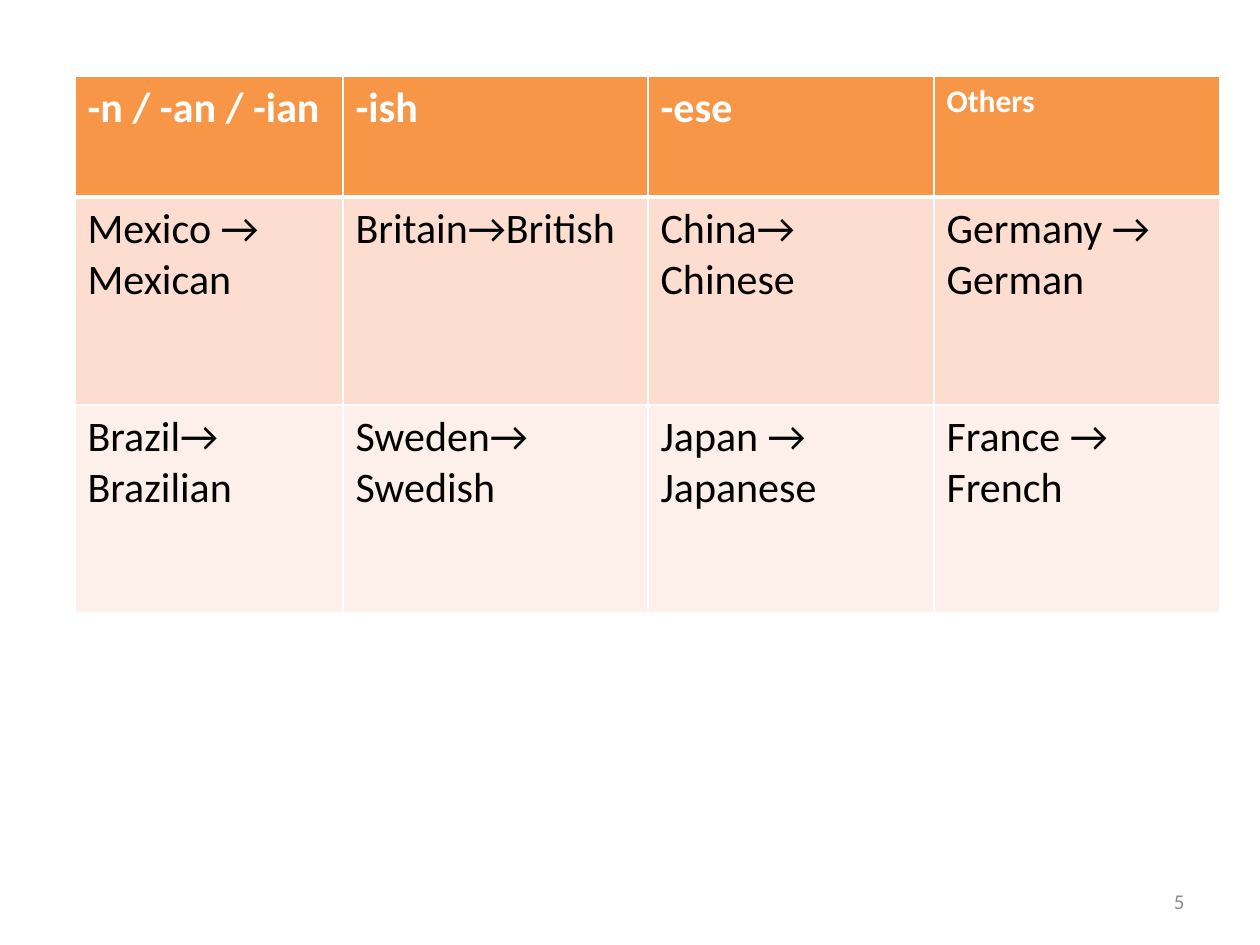
from pptx import Presentation
from pptx.dml.color import RGBColor
from pptx.enum.text import MSO_ANCHOR, PP_ALIGN
from pptx.oxml import parse_xml
from pptx.oxml.ns import nsdecls
from pptx.util import Pt

RIGHT, MIDDLE = PP_ALIGN.RIGHT, MSO_ANCHOR.MIDDLE
WHITE = RGBColor(0xFF, 0xFF, 0xFF)
BLACK = RGBColor(0x00, 0x00, 0x00)
GRAY = RGBColor(0x8C, 0x8C, 0x8C)
ORANGE = RGBColor(0xF7, 0x96, 0x46)
PEACH = RGBColor(0xFC, 0xDD, 0xCF)
PALE = RGBColor(0xFD, 0xEF, 0xE9)
FONT = "Calibri"

# Content
ROWS = [
    ("-n / -an / -ian", "-ish", "-ese", "Others"),
    ("Mexico → Mexican", "Britain→British", "China→ Chinese", "Germany → German"),
    ("Brazil→ Brazilian", "Sweden→ Swedish", "Japan → Japanese", "France → French"),
]
ROW_FILLS = [ORANGE, PEACH, PALE]
COL_WIDTHS = [268, 305, 286, 286]
ROW_HEIGHTS = [121, 208, 208]
SMALL_HEADING = "Others"
PAGE_NUMBER = "5"


def px(n):
    return round(n * 914400 / 126)


def style(p, size, color, bold=False):
    p.font.name = FONT
    p.font.size = Pt(size)
    p.font.bold = bold
    p.font.color.rgb = color


def add_borders(cell, bottom, top):
    """Put white lines of the given widths round a cell, before its fill."""
    widths = {"lnL": 1, "lnR": 1, "lnT": top, "lnB": bottom}
    tcPr = cell._tc.get_or_add_tcPr()
    for i, (tag, width) in enumerate(widths.items()):
        tcPr.insert(i, parse_xml(
            f'<a:{tag} {nsdecls("a")} w="{Pt(width)}"><a:solidFill>'
            f'<a:srgbClr val="{WHITE}"/></a:solidFill></a:{tag}>'))


prs = Presentation()
prs.slide_width, prs.slide_height = px(1260), px(945)
s = prs.slides.add_slide(prs.slide_layouts[6])

# Table of nationality endings
table = s.shapes.add_table(len(ROWS), len(COL_WIDTHS), px(75), px(76),
                           px(sum(COL_WIDTHS)), px(sum(ROW_HEIGHTS))).table
for column, width in zip(table.columns, COL_WIDTHS):
    column.width = px(width)
for r, (texts, height, fill) in enumerate(zip(ROWS, ROW_HEIGHTS, ROW_FILLS)):
    table.rows[r].height = px(height)
    header = r == 0
    for c, text in enumerate(texts):
        cell = table.cell(r, c)
        cell.text = text
        cell.fill.solid()
        cell.fill.fore_color.rgb = fill
        add_borders(cell, bottom=3 if header else 1, top=3 if r == 1 else 1)
        style(cell.text_frame.paragraphs[0], 18 if text == SMALL_HEADING else 24,
              WHITE if header else BLACK, header)

# Page number
tf = s.shapes.add_textbox(px(903), px(876), px(294), px(50)).text_frame
tf.word_wrap = True
tf.vertical_anchor = MIDDLE
p = tf.paragraphs[0]
p.text = PAGE_NUMBER
p.alignment = RIGHT
style(p, 12, GRAY)

prs.save("out.pptx")
